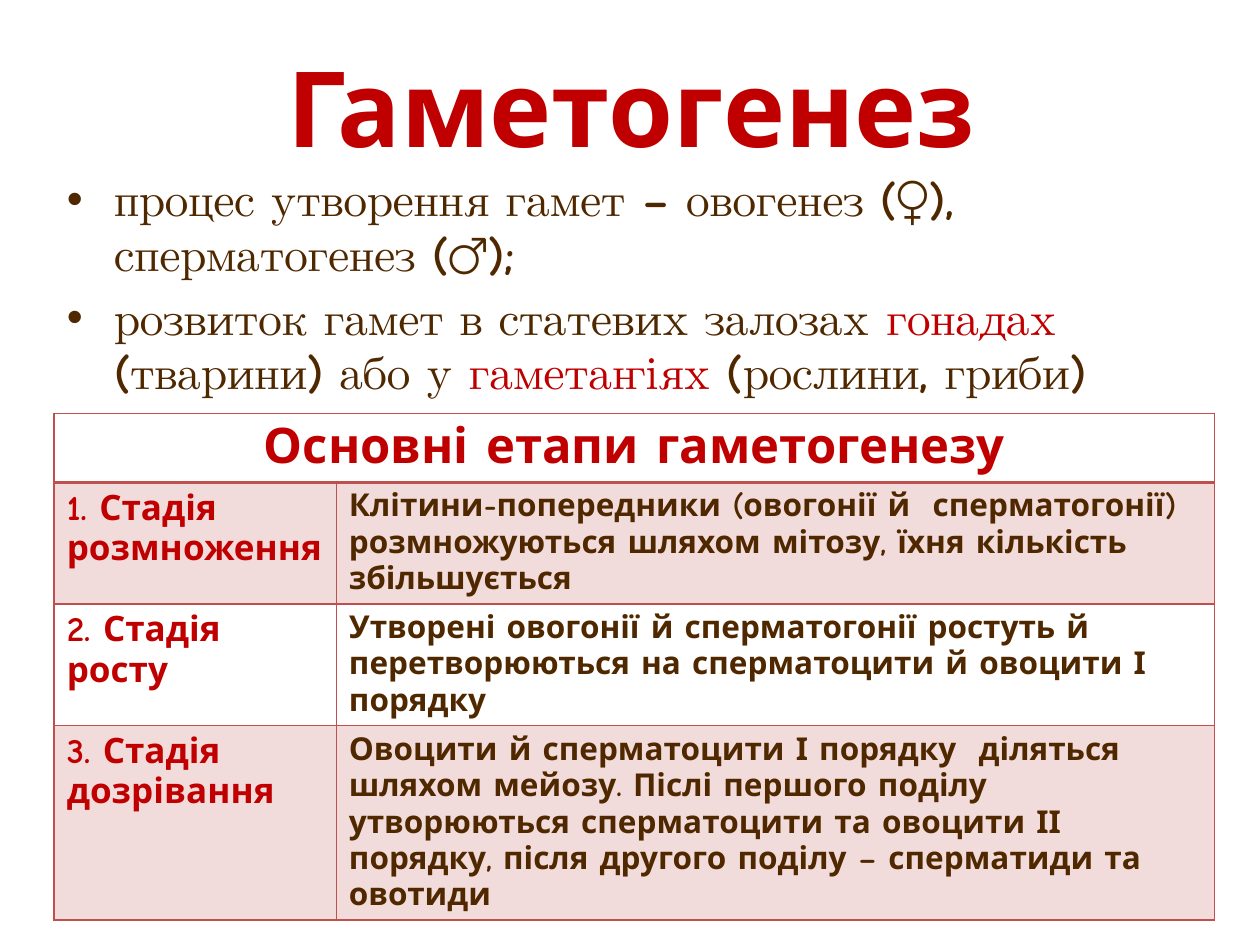
from lxml import etree
from pptx import Presentation
from pptx.dml.color import RGBColor
from pptx.enum.lang import MSO_LANGUAGE_ID
from pptx.enum.text import MSO_ANCHOR, MSO_AUTO_SIZE, PP_ALIGN
from pptx.oxml.ns import qn
from pptx.util import Inches, Pt

CENTER, LEFT = PP_ALIGN.CENTER, PP_ALIGN.LEFT
MIDDLE = MSO_ANCHOR.MIDDLE
NO_FIT = MSO_AUTO_SIZE.NONE
UKRAINIAN = MSO_LANGUAGE_ID.UKRAINIAN

FONT = "Comic Neue"
RED, BROWN, ROSE = "C00000", "502800", "C0504D"

DEFINITIONS = [
    [("процес утворення гамет – овогенез (♀), сперматогенез (♂);", BROWN)],
    [
        ("розвиток гамет в статевих залозах ", BROWN),
        ("гонадах", RED),
        (" (тварини) або у ", BROWN),
        ("гаметангіях", RED),
        (" (рослини, гриби)", BROWN),
    ],
]
STAGES = [
    ("1. Стадія розмноження",
     "Клітини-попередники (овогонії й  сперматогонії) розмножуються шляхом "
     "мітозу, їхня кількість збільшується"),
    ("2. Стадія росту",
     "Утворені овогонії й сперматогонії ростуть й перетворюються на "
     "сперматоцити й овоцити І порядку"),
    ("3. Стадія дозрівання",
     "Овоцити й сперматоцити І порядку  діляться шляхом мейозу. Післі першого "
     "поділу утворюються сперматоцити та овоцити ІІ порядку, після другого "
     "поділу – сперматиди та овотиди"),
]


def rgb(color):
    return RGBColor.from_string(color)


def add_run(paragraph, text, size, color):
    run = paragraph.add_run()
    run.text = text
    font_format = {"name": FONT, "size": Pt(size), "bold": True,
                   "language_id": UKRAINIAN}
    for attribute, value in font_format.items():
        setattr(run.font, attribute, value)
    run.font.color.rgb = rgb(color)


def place(placeholder, left, top, width, height):
    box = {"left": left, "top": top, "width": width, "height": height}
    for attribute, value in box.items():
        setattr(placeholder, attribute, Inches(value))
    placeholder.text_frame.auto_size = NO_FIT


def add_title(slide):
    title = slide.shapes.title
    place(title, 0.51, 0.21, 9, 1.25)
    title.text_frame.vertical_anchor = MIDDLE
    heading = title.text_frame.paragraphs[0]
    heading.alignment = CENTER
    add_run(heading, "Гаметогенез", 60, RED)


def add_definitions(slide):
    body = slide.placeholders[1]
    place(body, 0.43, 1.31, 9, 1.73)
    frame = body.text_frame
    for index, parts in enumerate(DEFINITIONS):
        item = frame.add_paragraph() if index else frame.paragraphs[0]
        for text, color in parts:
            add_run(item, text, 26, color)


def set_borders(cell, widths):
    """Draw the cell's sides; widths maps L, R, T and B to points."""
    properties = cell._tc.get_or_add_tcPr()
    for side, width in widths.items():
        line = etree.SubElement(properties, qn(f"a:ln{side}"), w=str(Pt(width)))
        solid = etree.SubElement(line, qn("a:solidFill"))
        etree.SubElement(solid, qn("a:srgbClr"), val=ROSE)


def set_fill(cell, shaded):
    if not shaded:
        cell.fill.background()
        return
    cell.fill.solid()
    cell.fill.fore_color.rgb = rgb(ROSE)
    color = cell._tc.tcPr.find(qn("a:solidFill")).find(qn("a:srgbClr"))
    etree.SubElement(color, qn("a:alpha"), val="20000")


def write_cell(cell, text, size, color, alignment=LEFT):
    paragraph = cell.text_frame.paragraphs[0]
    paragraph.alignment = alignment
    add_run(paragraph, text, size, color)


def add_stage_table(slide):
    row_count = len(STAGES) + 1
    frame = slide.shapes.add_table(row_count, 2, Inches(0.43), Inches(3.28),
                                   Inches(9.21), Inches(3.87))
    table = frame.table
    for column, width in zip(table.columns, (2.24, 6.97)):
        column.width = Inches(width)

    # Rows grow to fit their text; a thicker rule closes the header
    for index, row in enumerate(table.rows):
        row.height = Inches(0.41)
        for cell in row.cells:
            set_borders(cell, {"L": 1, "R": 1, "T": 2 if index == 1 else 1,
                               "B": 2 if index == 0 else 1})
            set_fill(cell, shaded=index % 2 == 1)

    # Header across both columns
    header = table.cell(0, 0)
    header.merge(table.cell(0, 1))
    write_cell(header, "Основні етапи гаметогенезу", 28, RED, CENTER)

    # Stage names and descriptions
    for index, (stage, description) in enumerate(STAGES, start=1):
        write_cell(table.cell(index, 0), stage, 20, RED)
        write_cell(table.cell(index, 1), description, 18, BROWN)


def main():
    presentation = Presentation()
    presentation.slide_width = Inches(10)
    presentation.slide_height = Inches(7.5)
    slide = presentation.slides.add_slide(presentation.slide_layouts[1])
    add_title(slide)
    add_definitions(slide)
    add_stage_table(slide)
    presentation.save("out.pptx")


if __name__ == "__main__":
    main()
